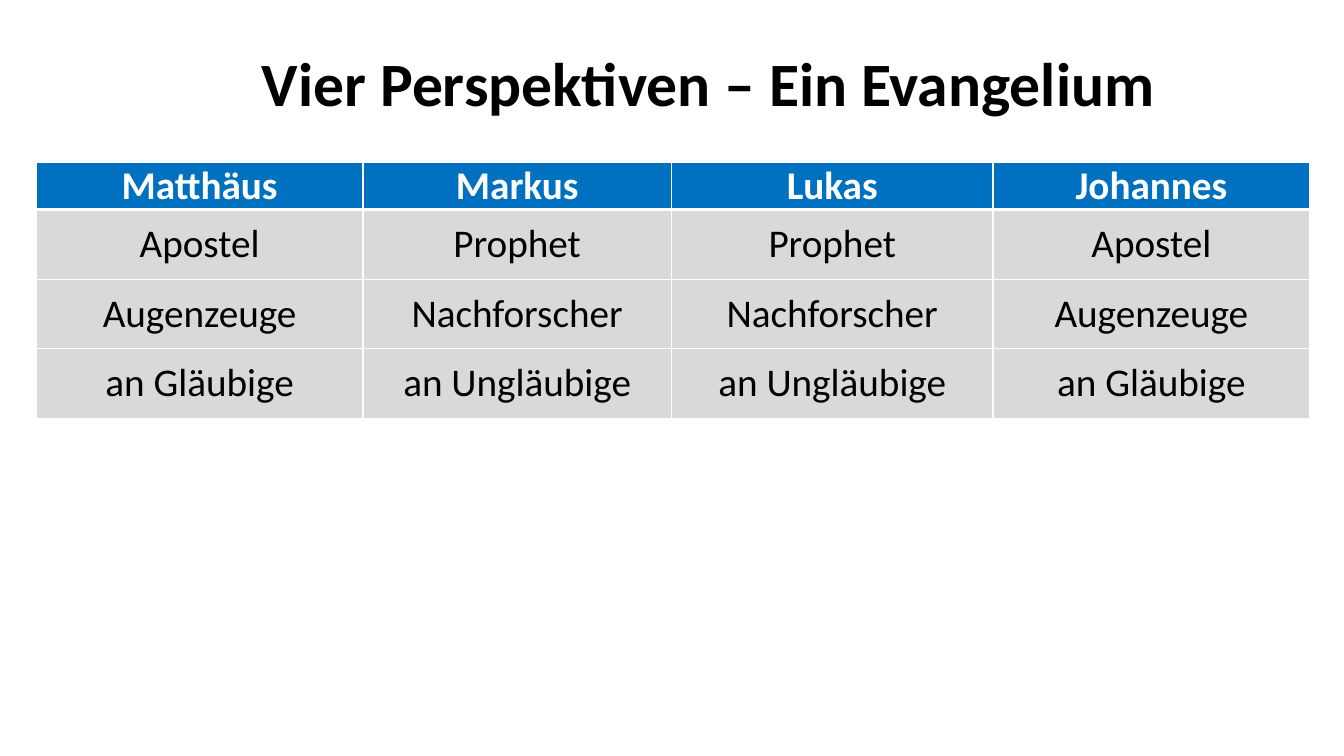
import pptx
import pptx.util
import pptx.dml.color
import pptx.enum.text
import pptx.oxml.ns
import lxml.etree
from dataclasses import dataclass

Inches = pptx.util.Inches
Pt = pptx.util.Pt
RGB = pptx.dml.color.RGBColor.from_string
MIDDLE = pptx.enum.text.MSO_ANCHOR.MIDDLE
CENTER = pptx.enum.text.PP_ALIGN.CENTER


@dataclass(frozen=True)
class Theme:
    font: str = "Calibri"
    black: str = "000000"
    white: str = "FFFFFF"
    blue: str = "0070C0"
    grey: str = "D9D9D9"
    title: int = 44
    body: int = 28
    thin: int = 1
    thick: int = 3


def write(frame, text, *, font, size, color, bold=False, space=None):
    """Fill a text frame with one centred paragraph."""
    para = frame.paragraphs[0]
    para.alignment = CENTER
    if space:
        para.line_spacing = space
    run = para.add_run()
    run.text = text
    run.font.name = font
    run.font.size = Pt(size)
    run.font.bold = bold
    run.font.color.rgb = RGB(color)


def edge(cell, side, width, color):
    """Draw one border; side is L, R, T or B, in that order per cell."""
    qn = pptx.oxml.ns.qn
    props = cell._tc.get_or_add_tcPr()
    line = lxml.etree.SubElement(props, qn(f"a:ln{side}"), w=str(Pt(width)))
    fill = lxml.etree.SubElement(line, qn("a:solidFill"))
    lxml.etree.SubElement(fill, qn("a:srgbClr"), val=color)


class Page:
    def __init__(self, deck, theme):
        self.theme = theme
        self.slide = deck.slides.add_slide(deck.slide_layouts[6])

    def title(self, text, box):
        look = self.theme
        frame = self.slide.shapes.add_textbox(*map(Inches, box)).text_frame
        frame.word_wrap = True
        frame.vertical_anchor = MIDDLE
        write(frame, text, font=look.font, size=look.title,
              color=look.black, bold=True, space=0.9)

    def table(self, data, left, top, widths, heights):
        box = map(Inches, (left, top, sum(widths), sum(heights)))
        grid = self.slide.shapes.add_table(len(data), len(widths), *box).table
        for col, width in zip(grid.columns, widths):
            col.width = Inches(width)
        for row, height in zip(grid.rows, heights):
            row.height = Inches(height)
        for r, names in enumerate(data):
            for c, name in enumerate(names):
                self.cell(grid.cell(r, c), name, r)

    def cell(self, cell, text, row):
        look = self.theme
        head = row == 0
        cell.vertical_anchor = MIDDLE
        cell.margin_left = cell.margin_right = Inches(0.14)
        cell.margin_top = cell.margin_bottom = 0
        above = look.thick if row == 1 else look.thin
        below = look.thick if head else look.thin
        for side, width in zip("LRTB", (look.thin, look.thin, above, below)):
            edge(cell, side, width, look.white)
        cell.fill.solid()
        cell.fill.fore_color.rgb = RGB(look.blue if head else look.grey)
        write(cell.text_frame, text, font=look.font, size=look.body,
              color=look.white if head else look.black, bold=head)


def main():
    deck = pptx.Presentation()
    deck.slide_width = Inches(13.33)
    deck.slide_height = Inches(7.5)
    page = Page(deck, Theme())
    page.title("Vier Perspektiven – Ein Evangelium", (1.28, 0.41, 11.5, 0.89))
    gospels = [
        ("Matthäus", "Markus", "Lukas", "Johannes"),
        ("Apostel", "Prophet", "Prophet", "Apostel"),
        ("Augenzeuge", "Nachforscher", "Nachforscher", "Augenzeuge"),
        ("an Gläubige", "an Ungläubige", "an Ungläubige", "an Gläubige"),
    ]
    page.table(gospels, 0.36, 1.61, widths=(3.24, 3.06, 3.19, 3.14),
               heights=(0.47, 0.69, 0.69, 0.69))
    deck.save("out.pptx")


if __name__ == "__main__":
    main()
